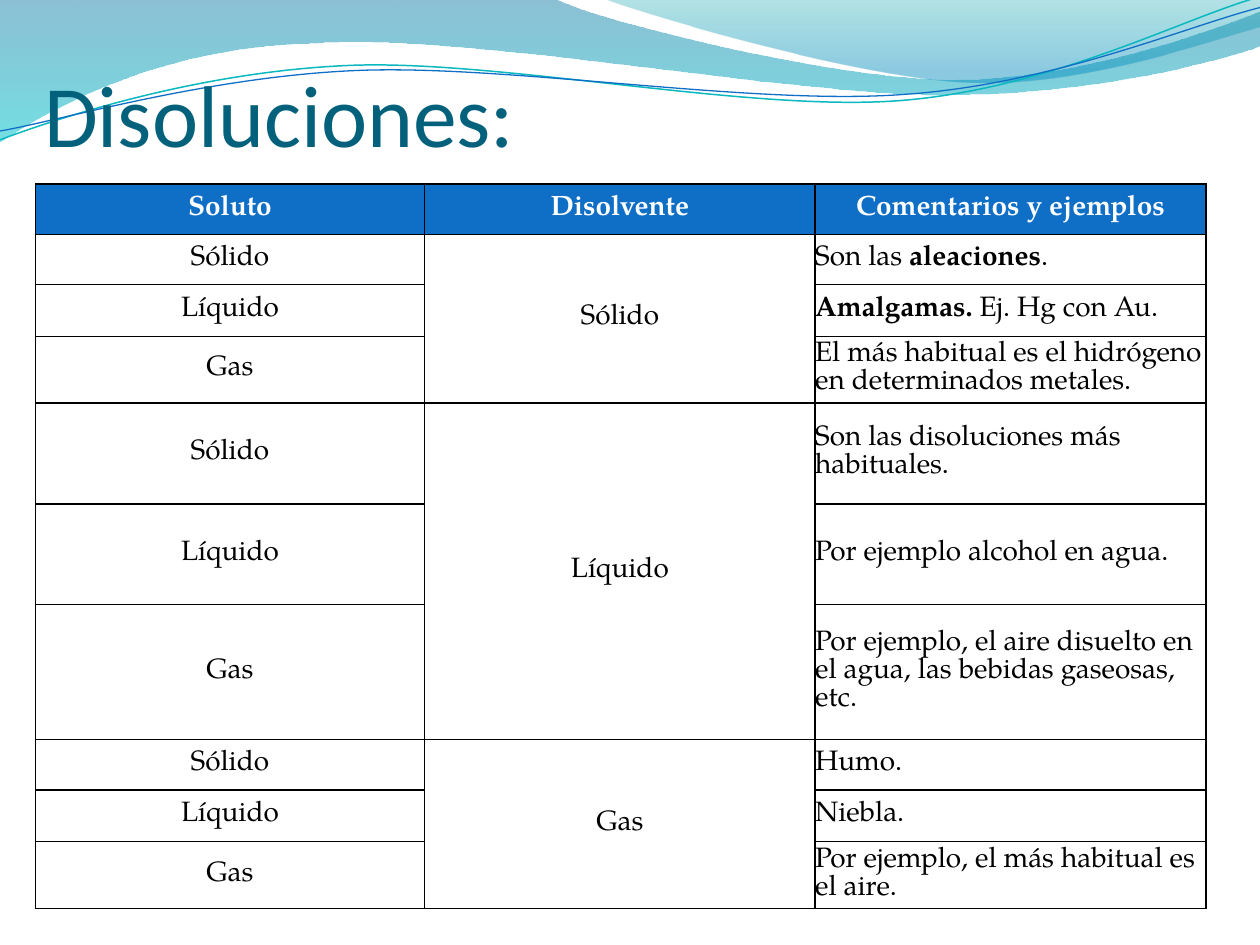
from dataclasses import dataclass
from itertools import chain

from lxml.etree import SubElement
from pptx import Presentation
from pptx.dml.color import RGBColor
from pptx.enum.text import MSO_ANCHOR as Anchor, PP_ALIGN as Align
from pptx.oxml.ns import qn
from pptx.util import Pt

SCALE = 9144


def emu(px: int) -> int:
    return px * SCALE


@dataclass(frozen=True)
class Theme:
    title_font: str = "Calibri"
    table_font: str = "TeX Gyre Pagella"
    title_size: float = 50
    table_size: float = 16
    border_width: float = 1
    title: str = "04617B"
    header: str = "0F6FC6"
    header_text: str = "FFFFFF"
    ink: str = "000000"


@dataclass(frozen=True)
class Stop:
    position: float
    color: str
    opacity: int


@dataclass(frozen=True)
class Wave:
    start: tuple
    segments: tuple
    stops: tuple = ()
    line: str = ""
    width: float = 0


@dataclass(frozen=True)
class Run:
    text: str
    bold: bool = False


@dataclass(frozen=True)
class Row:
    height: int
    solute: str
    comment: tuple


@dataclass(frozen=True)
class Group:
    solvent: str
    rows: tuple


THEME = Theme()
WAVES = (
    Wave((0, 0), (
        ((440, -1),),
        ((476, 17), (664, 63), (758, 63)),
        ((853, 63), (958, 26), (1000, 9)),
        ((1001, 36),),
        ((983, 44), (870, 76), (746, 75)),
        ((622, 75), (382, 28), (257, 34)),
        ((129, 36), (46, 83), (-1, 113)),
    ), stops=(Stop(0, "0074A1", 45), Stop(1, "00C6CF", 55))),
    Wave((479, -1), (
        ((509, 11), (682, 62), (769, 65)),
        ((856, 69), (961, 32), (1000, 21)),
        ((1000, 0),),
    ), stops=(Stop(0, "00A1A9", 30), Stop(0.8, "008BBF", 45))),
    Wave((0, 111), (
        ((48, 93), (158, 57), (277, 52)),
        ((395, 47), (593, 89), (713, 80)),
        ((833, 71), (938, 15), (998, -2)),
    ), line="0AB8BF", width=0.85),
    Wave((0, 104), (
        ((47, 96), (164, 61), (283, 56)),
        ((403, 51), (597, 84), (717, 75)),
        ((836, 67), (941, 21), (1000, 6)),
    ), line="0F6FC6", width=0.75),
)
HEADERS = ("Soluto", "Disolvente", "Comentarios y ejemplos")
HEADER_HEIGHT = 40
COLUMNS = (309, 310, 310)
GROUPS = (
    Group("Sólido", (
        Row(40, "Sólido", (Run("Son las "), Run("aleaciones", True), Run("."))),
        Row(41, "Líquido", (Run("Amalgamas. ", True), Run("Ej. Hg con Au."))),
        Row(53, "Gas", (Run("El más habitual es el hidrógeno en determinados metales."),)),
    )),
    Group("Líquido", (
        Row(80, "Sólido", (Run("Son las disoluciones más habituales."),)),
        Row(80, "Líquido", (Run("Por ejemplo alcohol en agua."),)),
        Row(107, "Gas", (Run("Por ejemplo, el aire disuelto en el agua, las bebidas gaseosas, etc."),)),
    )),
    Group("Gas", (
        Row(40, "Sólido", (Run("Humo."),)),
        Row(41, "Líquido", (Run("Niebla."),)),
        Row(53, "Gas", (Run("Por ejemplo, el más habitual es el aire."),)),
    )),
)


def curve_segments(shape, segments: tuple) -> None:
    path = shape.element.find(".//" + qn("a:path"))
    lines = iter(path.findall(qn("a:lnTo")))
    for segment in segments:
        steps = [next(lines) for _ in segment]
        if len(steps) == 3:
            curve = SubElement(path, qn("a:cubicBezTo"))
            steps[0].addprevious(curve)
            for step in steps:
                curve.append(step[0])
                path.remove(step)


def draw_wave(slide, wave: Wave) -> None:
    builder = slide.shapes.build_freeform(*wave.start, scale=SCALE)
    builder.add_line_segments(chain.from_iterable(wave.segments), close=bool(wave.stops))
    shape = builder.convert_to_shape()
    shape.shadow.inherit = False
    curve_segments(shape, wave.segments)
    if wave.stops:
        shape.fill.gradient()
        shape.fill.gradient_angle = 270
        for target, stop in zip(shape.fill.gradient_stops, wave.stops):
            target.position = stop.position
            target.color.rgb = RGBColor.from_string(stop.color)
        colors = shape.element.spPr.findall(".//" + qn("a:srgbClr"))
        for color, stop in zip(colors, wave.stops):
            SubElement(color, qn("a:alpha")).set("val", str(stop.opacity * 1000))
        shape.line.fill.background()
    else:
        shape.fill.background()
        shape.line.color.rgb = RGBColor.from_string(wave.line)
        shape.line.width = Pt(wave.width)


def style_font(font, name: str, size: float, color: str, bold: bool = False) -> None:
    font.name = name
    font.size = Pt(size)
    font.bold = bold
    font.color.rgb = RGBColor.from_string(color)


def draw_title(slide, text: str) -> None:
    box = slide.shapes.add_textbox(emu(35), emu(29), emu(900), emu(102))
    frame = box.text_frame
    frame.word_wrap = True
    frame.vertical_anchor = Anchor.BOTTOM
    frame.margin_left = frame.margin_right = frame.margin_bottom = 0
    frame.margin_top = emu(5)
    frame.text = text
    style_font(frame.paragraphs[0].runs[0].font, THEME.title_font, THEME.title_size, THEME.title)


def style_cell(cell, fill: str = "") -> None:
    cell.margin_left = cell.margin_right = cell.margin_top = cell.margin_bottom = 0
    cell.vertical_anchor = Anchor.MIDDLE
    properties = cell._tc.get_or_add_tcPr()
    for side in ("lnL", "lnR", "lnT", "lnB"):
        border = SubElement(properties, qn(f"a:{side}"), w=str(Pt(THEME.border_width)))
        solid = SubElement(border, qn("a:solidFill"))
        SubElement(solid, qn("a:srgbClr"), val=THEME.ink)
    if fill:
        cell.fill.solid()
        cell.fill.fore_color.rgb = RGBColor.from_string(fill)
    else:
        cell.fill.background()


def write_cell(cell, runs: tuple, align: Align = Align.CENTER, color: str = THEME.ink) -> None:
    paragraph = cell.text_frame.paragraphs[0]
    paragraph.alignment = align
    paragraph.line_spacing = Pt(THEME.table_size)
    for item in runs:
        run = paragraph.add_run()
        run.text = item.text
        style_font(run.font, THEME.table_font, THEME.table_size, color, item.bold)


def draw_table(slide) -> None:
    rows = [row for group in GROUPS for row in group.rows]
    heights = [HEADER_HEIGHT, *(row.height for row in rows)]
    frame = slide.shapes.add_table(len(heights), len(COLUMNS), emu(28), emu(146),
                                   emu(sum(COLUMNS)), emu(sum(heights)))
    table = frame.table
    table.first_row = table.horz_banding = False
    for column, width in zip(table.columns, COLUMNS):
        column.width = emu(width)
    for index, height in enumerate(heights):
        table.rows[index].height = emu(height)
        for cell in table.rows[index].cells:
            style_cell(cell, "" if index else THEME.header)
    for column, header in enumerate(HEADERS):
        write_cell(table.cell(0, column), (Run(header, True),), color=THEME.header_text)
    top = 1
    for group in GROUPS:
        solvent = table.cell(top, 1)
        solvent.merge(table.cell(top + len(group.rows) - 1, 1))
        write_cell(solvent, (Run(group.solvent),))
        for index, row in enumerate(group.rows, top):
            write_cell(table.cell(index, 0), (Run(row.solute),))
            write_cell(table.cell(index, 2), row.comment, Align.LEFT)
        top += len(group.rows)


def main() -> None:
    presentation = Presentation()
    presentation.slide_width, presentation.slide_height = emu(1000), emu(750)
    slide = presentation.slides.add_slide(presentation.slide_layouts[6])
    for wave in WAVES:
        draw_wave(slide, wave)
    draw_title(slide, "Disoluciones:")
    draw_table(slide)
    presentation.save("out.pptx")


if __name__ == "__main__":
    main()
